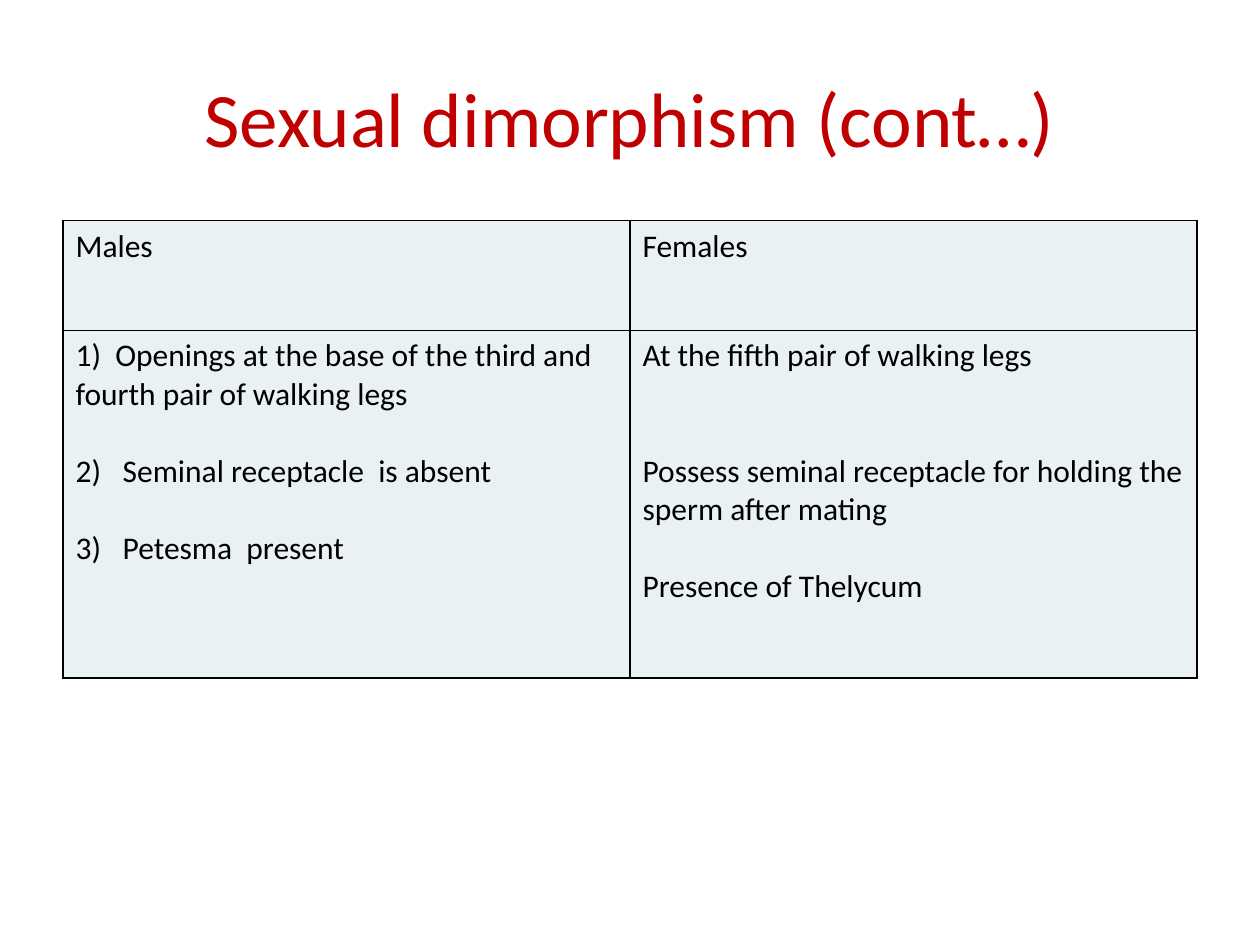
from lxml.etree import SubElement
from pptx import Presentation
from pptx.dml.color import RGBColor
from pptx.enum.text import MSO_ANCHOR as Anchor, PP_ALIGN as Align
from pptx.oxml.ns import qn
from pptx.util import Cm, Pt

FONT = "Calibri"
BLACK, RED, PALE_BLUE = "000000", "C00000", "E9F1F5"
LEFT, WIDTH = Cm(1.27), Cm(22.86)
ROW_HEIGHTS = (Cm(2.21), Cm(7.01))
LINE = 22

# Each paragraph: text, blank lines of space before it, list number start.
HEADINGS = ("Males", "Females")
MALES = (
    ("1)  Openings at the base of the third and  fourth pair of walking legs", 0, None),
    ("Seminal receptacle  is absent", 1, 2),
    ("Petesma  present", 1, 2),
)
FEMALES = (
    ("At the fifth pair of walking legs", 0, None),
    ("Possess seminal receptacle for holding the sperm after mating", 2, None),
    ("Presence of Thelycum", 1, None),
)


def color(value):
    return RGBColor.from_string(value)


def add_run(paragraph, text, size, font_color):
    run = paragraph.add_run()
    run.text = text
    run.font.name = FONT
    run.font.size = Pt(size)
    run.font.color.rgb = color(font_color)


def add_title(slide, text):
    shape = slide.shapes.add_textbox(LEFT, Cm(0.76), WIDTH, Cm(3.18))
    frame = shape.text_frame
    frame.word_wrap = True
    frame.vertical_anchor = Anchor.MIDDLE
    paragraph = frame.paragraphs[0]
    paragraph.alignment = Align.CENTER
    add_run(paragraph, text, 44, RED)


def number_paragraph(paragraph, start):
    properties = paragraph._p.get_or_add_pPr()
    properties.set("marL", str(Cm(0.95)))
    properties.set("indent", str(-Cm(0.95)))
    SubElement(properties, qn("a:buFont"), typeface=FONT)
    SubElement(properties, qn("a:buAutoNum"), type="arabicParenR", startAt=str(start))


def style_cell(cell):
    properties = cell._tc.get_or_add_tcPr()
    for side in ("L", "R", "T", "B"):
        border = SubElement(properties, qn(f"a:ln{side}"), w=str(Pt(1)))
        fill = SubElement(border, qn("a:solidFill"))
        SubElement(fill, qn("a:srgbClr"), val=BLACK)
    cell.fill.solid()
    cell.fill.fore_color.rgb = color(PALE_BLUE)


def fill_cell(cell, items):
    style_cell(cell)
    frame = cell.text_frame
    for index, (text, gap, start) in enumerate(items):
        paragraph = frame.add_paragraph() if index else frame.paragraphs[0]
        if gap:
            paragraph.space_before = Pt(gap * LINE)
        if start:
            number_paragraph(paragraph, start)
        add_run(paragraph, text, 18, BLACK)


def add_comparison(slide):
    rows = ([[(heading, 0, None)] for heading in HEADINGS], (MALES, FEMALES))
    table = slide.shapes.add_table(2, 2, LEFT, Cm(4.45), WIDTH, sum(ROW_HEIGHTS)).table
    table.first_row = False
    table.horz_banding = False
    for row_index, (height, contents) in enumerate(zip(ROW_HEIGHTS, rows)):
        table.rows[row_index].height = height
        for column_index, items in enumerate(contents):
            fill_cell(table.cell(row_index, column_index), items)


def main():
    presentation = Presentation()
    presentation.slide_width = Cm(25.4)
    presentation.slide_height = Cm(19.05)
    slide = presentation.slides.add_slide(presentation.slide_layouts[6])
    add_title(slide, "Sexual dimorphism (cont…)")
    add_comparison(slide)
    presentation.save("out.pptx")


if __name__ == "__main__":
    main()
